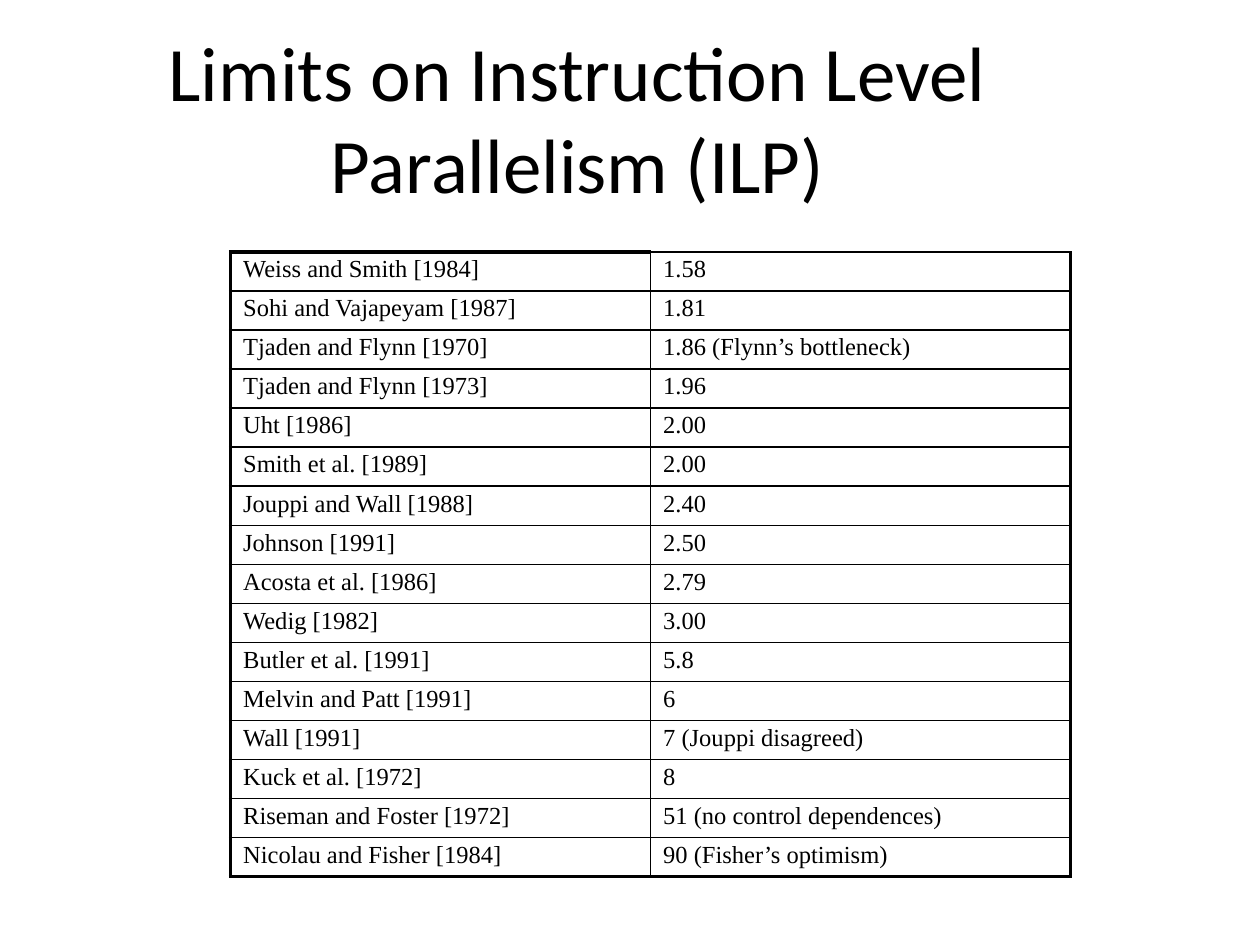
from dataclasses import dataclass

from lxml.etree import SubElement
from pptx import Presentation
from pptx.dml.color import RGBColor as RGB
from pptx.enum.text import MSO_ANCHOR as ANCHOR, MSO_AUTO_SIZE as AUTO, PP_ALIGN as ALIGN
from pptx.oxml.ns import qn
from pptx.util import Inches, Pt


@dataclass(frozen=True)
class Theme:
    ink: str = "000000"
    title_font: str = "Calibri"
    table_font: str = "Times New Roman"
    title_size: int = 44
    table_size: int = 14
    thin: float = 1
    thick: float = 2.25


THEME = Theme()
TITLE = "Limits on Instruction Level Parallelism (ILP)"
STUDIES = [
    ("Weiss and Smith [1984]", "1.58"),
    ("Sohi and Vajapeyam [1987]", "1.81"),
    ("Tjaden and Flynn [1970]", "1.86 (Flynn’s bottleneck)"),
    ("Tjaden and Flynn [1973]", "1.96"),
    ("Uht [1986]", "2.00"),
    ("Smith et al. [1989]", "2.00"),
    ("Jouppi and Wall [1988]", "2.40"),
    ("Johnson [1991]", "2.50"),
    ("Acosta et al. [1986]", "2.79"),
    ("Wedig [1982]", "3.00"),
    ("Butler et al. [1991]", "5.8"),
    ("Melvin and Patt [1991]", "6"),
    ("Wall [1991]", "7 (Jouppi disagreed)"),
    ("Kuck et al. [1972]", "8"),
    ("Riseman and Foster [1972]", "51 (no control dependences)"),
    ("Nicolau and Fisher [1984]", "90 (Fisher’s optimism)"),
]


def write(tf, text, *, font, size, align=ALIGN.LEFT, spacing=None):
    p = tf.paragraphs[0]
    p.alignment = align
    if spacing:
        p.line_spacing = spacing
    r = p.add_run()
    r.text = text
    r.font.name, r.font.size = font, Pt(size)
    r.font.color.rgb = RGB.from_string(THEME.ink)


def set_borders(cell, **widths):
    """Draw cell borders; keywords L, R, T, B give widths in points."""
    tc_pr = cell._tc.get_or_add_tcPr()
    # Border lines must come before the fill, in the order L, R, T, B
    for i, side in enumerate("LRTB"):
        ln = SubElement(tc_pr, qn(f"a:ln{side}"), w=str(Pt(widths[side])))
        fill = SubElement(ln, qn("a:solidFill"))
        SubElement(fill, qn("a:srgbClr"), val=THEME.ink)
        tc_pr.insert(i, ln)


def add_title(slide, text):
    sp = slide.shapes.title
    sp.left, sp.top, sp.width, sp.height = map(Inches, (0.5, 0.3, 8.17, 1.25))
    tf = sp.text_frame
    tf.word_wrap, tf.auto_size = True, AUTO.NONE
    tf.vertical_anchor = ANCHOR.MIDDLE
    write(tf, text, font=THEME.title_font, size=THEME.title_size, align=ALIGN.CENTER)


def add_grid(slide, rows, left, top, width, height):
    n_rows, n_cols = len(rows), len(rows[0])
    table = slide.shapes.add_table(n_rows, n_cols, left, top, width, height).table
    table.first_row = table.horz_banding = False
    for i, row in enumerate(rows):
        for j, text in enumerate(row):
            cell = table.cell(i, j)
            cell.fill.background()
            cell.margin_left = cell.margin_right = Inches(0.1)
            cell.margin_top = cell.margin_bottom = Inches(0.05)
            write(cell.text_frame, text, font=THEME.table_font,
                  size=THEME.table_size, spacing=0.9)
            # Heavy frame, except above the second column
            set_borders(
                cell,
                L=THEME.thick if j == 0 else THEME.thin,
                R=THEME.thick if j == n_cols - 1 else THEME.thin,
                T=THEME.thick if i == j == 0 else THEME.thin,
                B=THEME.thick if i == n_rows - 1 else THEME.thin,
            )


def main():
    prs = Presentation()
    prs.slide_width, prs.slide_height = Inches(10), Inches(7.5)
    slide = prs.slides.add_slide(prs.slide_layouts[5])
    add_title(slide, TITLE)
    # Two equal columns, each a third of the slide wide
    add_grid(slide, STUDIES, Inches(1.83), Inches(2),
             prs.slide_width * 2 // 3, Inches(4.96))
    prs.save("out.pptx")


if __name__ == "__main__":
    main()
